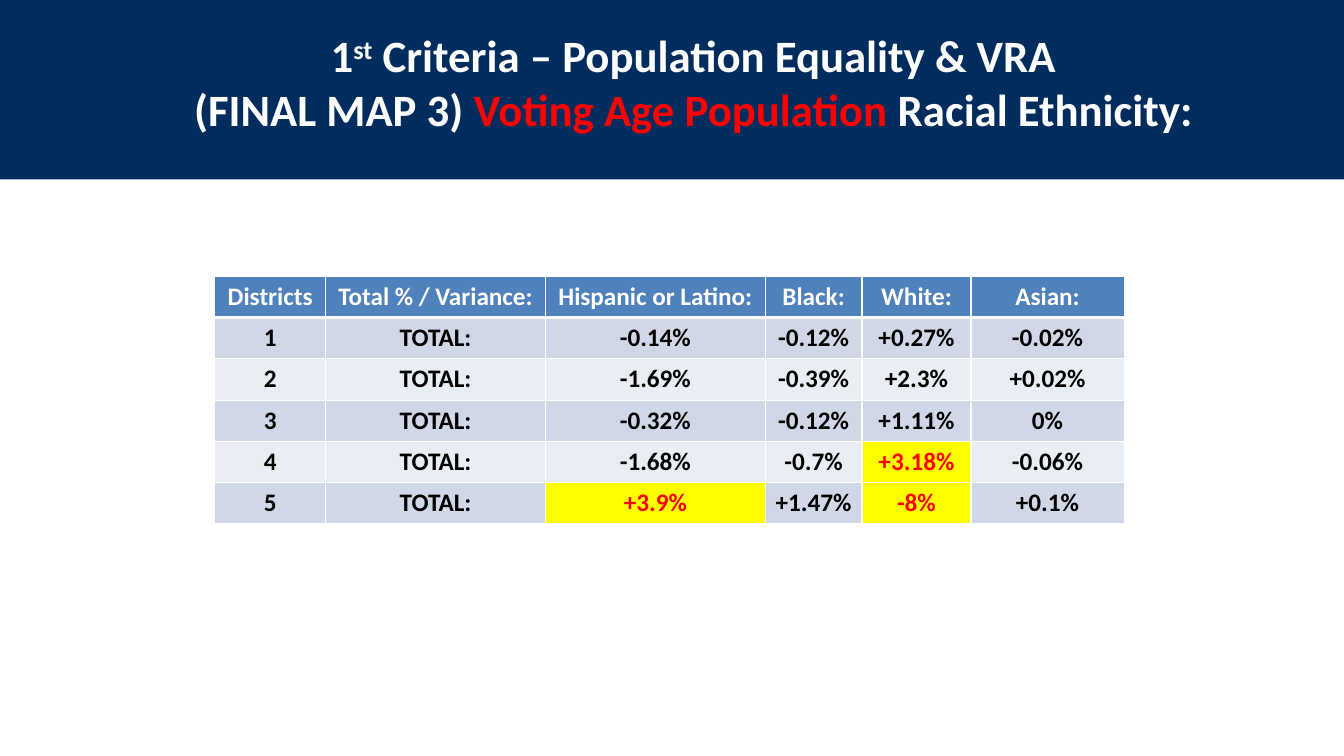
from lxml import etree
from pptx import Presentation
from pptx.dml.color import RGBColor
from pptx.enum.shapes import MSO_SHAPE
from pptx.enum.text import PP_ALIGN
from pptx.oxml.ns import qn
from pptx.util import Inches, Pt

RECTANGLE = MSO_SHAPE.RECTANGLE
CENTER = PP_ALIGN.CENTER

FONT = "Calibri"
NAVY, WHITE, BLACK, RED, YELLOW = "002D5D", "FFFFFF", "000000", "FF0000", "FFFF00"
HEADER_BLUE = "4F81BD"
BANDS = ("D0D8E8", "E9EDF4")

SLIDE_WIDTH, SLIDE_HEIGHT = 13.33, 7.5
TABLE_LEFT, TABLE_TOP, ROW_HEIGHT = 2.13, 2.74, 0.41
COLUMN_WIDTHS = (1.1, 2.18, 2.18, 0.96, 1.08, 1.52)

# Each title run: text, colour, baseline shift in percent
TITLE_LINES = (
    (("1", WHITE, 0), ("st", WHITE, 30),
     (" Criteria – Population Equality & VRA", WHITE, 0)),
    (("(FINAL MAP 3) ", WHITE, 0), ("Voting Age Population ", RED, 0),
     ("Racial Ethnicity:", WHITE, 0)),
)
HEADINGS = ("Districts", "Total % / Variance:", "Hispanic or Latino:",
            "Black:", "White:", "Asian:")
VARIANCES = (
    ("-0.14%", "-0.12%", "+0.27%", "-0.02%"),
    ("-1.69%", "-0.39%", "+2.3%", "+0.02%"),
    ("-0.32%", "-0.12%", "+1.11%", "0%"),
    ("-1.68%", "-0.7%", "+3.18%", "-0.06%"),
    ("+3.9%", "+1.47%", "-8%", "+0.1%"),
)
HIGHLIGHTS = {(4, 4), (5, 2), (5, 4)}  # (row, column)


def color(value):
    return RGBColor.from_string(value)


def style_paragraph(paragraph, size):
    paragraph.alignment = CENTER
    paragraph.font.name = FONT
    paragraph.font.size = Pt(size)
    paragraph.font.bold = True


def add_banner(slide):
    banner = slide.shapes.add_shape(
        RECTANGLE, 0, Inches(-0.03), Inches(SLIDE_WIDTH), Inches(1.81))
    banner.shadow.inherit = False
    banner.fill.solid()
    banner.fill.fore_color.rgb = color(NAVY)
    banner.line.fill.background()


def add_title(slide):
    box = slide.shapes.add_textbox(
        Inches(0.07), Inches(0.23), Inches(13.12), Inches(1.92))
    frame = box.text_frame
    frame.word_wrap = True
    for index, line in enumerate(TITLE_LINES):
        paragraph = frame.add_paragraph() if index else frame.paragraphs[0]
        style_paragraph(paragraph, 32)
        paragraph.level = 1
        properties = paragraph._p.get_or_add_pPr()
        properties.set("marL", str(Inches(0.5)))
        properties.set("indent", "0")
        for text, run_color, baseline in line:
            run = paragraph.add_run()
            run.text = text
            run.font.color.rgb = color(run_color)
            if baseline:
                run.font._element.set("baseline", str(baseline * 1000))


def set_borders(cell, widths):
    properties = cell._tc.get_or_add_tcPr()
    for side, width in zip("LRTB", widths):
        line = etree.SubElement(properties, qn(f"a:ln{side}"), w=str(Pt(width)))
        fill = etree.SubElement(line, qn("a:solidFill"))
        etree.SubElement(fill, qn("a:srgbClr"), val=WHITE)


def fill_cell(cell, text, text_color, background, borders):
    set_borders(cell, borders)
    cell.fill.solid()
    cell.fill.fore_color.rgb = color(background)
    # Narrow side margins keep the longest values on one line
    cell.margin_left = cell.margin_right = Inches(0.07)
    cell.text = text
    paragraph = cell.text_frame.paragraphs[0]
    style_paragraph(paragraph, 18)
    paragraph.font.color.rgb = color(text_color)


def cell_colors(row, column):
    if row == 0:
        return WHITE, HEADER_BLUE
    if (row, column) in HIGHLIGHTS:
        return RED, YELLOW
    return BLACK, BANDS[(row - 1) % 2]


def add_variance_table(slide):
    rows = [HEADINGS]
    for district, values in enumerate(VARIANCES, start=1):
        rows.append((str(district), "TOTAL:", *values))
    table = slide.shapes.add_table(
        len(rows), len(HEADINGS), Inches(TABLE_LEFT), Inches(TABLE_TOP),
        Inches(sum(COLUMN_WIDTHS)), Inches(ROW_HEIGHT * len(rows))).table
    for column, width in zip(table.columns, COLUMN_WIDTHS):
        column.width = Inches(width)
    for row, texts in enumerate(rows):
        table.rows[row].height = Inches(ROW_HEIGHT)
        # A thick rule separates the headings from the first district
        borders = (1, 1, 3 if row == 1 else 1, 3 if row == 0 else 1)
        for column, text in enumerate(texts):
            fill_cell(table.cell(row, column), text,
                      *cell_colors(row, column), borders)


def main():
    presentation = Presentation()
    presentation.slide_width = Inches(SLIDE_WIDTH)
    presentation.slide_height = Inches(SLIDE_HEIGHT)
    slide = presentation.slides.add_slide(presentation.slide_layouts[6])
    add_banner(slide)
    add_title(slide)
    add_variance_table(slide)
    presentation.save("out.pptx")


if __name__ == "__main__":
    main()
